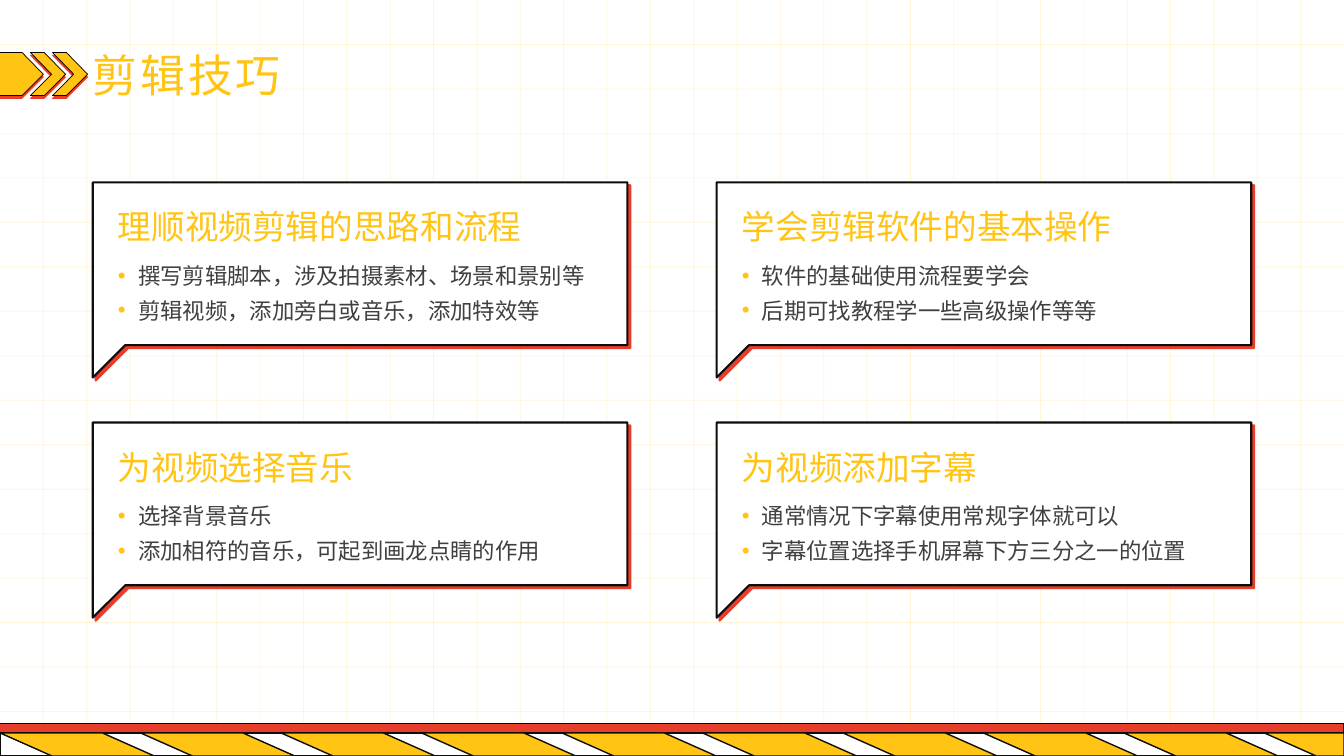
from itertools import product

from lxml.etree import SubElement
from pptx import Presentation
from pptx.dml.color import RGBColor
from pptx.enum.shapes import MSO_CONNECTOR, MSO_SHAPE
from pptx.enum.text import MSO_AUTO_SIZE, PP_ALIGN
from pptx.oxml.ns import qn
from pptx.util import Inches, Pt

COLORS = {
    "yellow": "FFC414",
    "red": "E73E2B",
    "white": "FFFFFF",
    "ink": "0D0D0D",
    "black": "000000",
    "body": "404040",
}
HEADING_FONT = "Noto Sans CJK JP"
BODY_FONT = "Noto Sans CJK SC"
COLUMNS, ROWS = 31, 17

TIPS = [
    ("理顺视频剪辑的思路和流程",
     ["撰写剪辑脚本，涉及拍摄素材、场景和景别等", "剪辑视频，添加旁白或音乐，添加特效等"]),
    ("学会剪辑软件的基本操作",
     ["软件的基础使用流程要学会", "后期可找教程学一些高级操作等等"]),
    ("为视频选择音乐",
     ["选择背景音乐", "添加相符的音乐，可起到画龙点睛的作用"]),
    ("为视频添加字幕",
     ["通常情况下字幕使用常规字体就可以", "字幕位置选择手机屏幕下方三分之一的位置"]),
]


def rgb(name):
    return RGBColor.from_string(COLORS[name])


def add_solid_fill(parent, name):
    fill = SubElement(parent, qn("a:solidFill"))
    return SubElement(fill, qn("a:srgbClr"), val=COLORS[name])


class GridSlide:
    """Draws on one slide; all lengths are grid columns and rows."""

    def __init__(self, deck):
        self.slide = deck.slides.add_slide(deck.slide_layouts[6])
        self.shapes = self.slide.shapes
        self.column = deck.slide_width / COLUMNS
        self.row = deck.slide_height / ROWS
        self.slide.background.fill.solid()
        self.slide.background.fill.fore_color.rgb = rgb("white")

    def point(self, x, y):
        return round(x * self.column), round(y * self.row)

    def paint(self, shape, fill, line, weight):
        shape.shadow.inherit = False
        shape.fill.solid()
        shape.fill.fore_color.rgb = rgb(fill)
        shape.line.color.rgb = rgb(line)
        shape.line.width = Pt(weight)

    def grid_line(self, start, end):
        rule = self.shapes.add_connector(
            MSO_CONNECTOR.STRAIGHT, *self.point(*start), *self.point(*end))
        rule.line.color.rgb = rgb("yellow")
        rule.line.width = Pt(0.5)
        color = rule.line._ln.find(".//" + qn("a:srgbClr"))
        SubElement(color, qn("a:alpha"), val="17000")
        SubElement(rule._element.spPr, qn("a:effectLst"))

    def band(self, y, height, fill, line, weight):
        bar = self.shapes.add_shape(
            MSO_SHAPE.RECTANGLE, *self.point(0, y), *self.point(COLUMNS, height))
        self.paint(bar, fill, line, weight)

    def outline(self, contours, fill, line, weight, shadow=None):
        """Draw closed contours as one shape; shadow is (points, degrees)."""
        contours = [[self.point(*p) for p in contour] for contour in contours]
        builder = self.shapes.build_freeform(*contours[0][0])
        for contour in contours:
            if contour is not contours[0]:
                builder.move_to(*contour[0])
            builder.add_line_segments(contour[1:], close=True)
        figure = builder.convert_to_shape()
        self.paint(figure, fill, line, weight)
        if shadow:
            distance, degrees = shadow
            effects = figure._element.spPr.find(qn("a:effectLst"))
            drop = SubElement(effects, qn("a:outerShdw"), blurRad="0",
                              dist=str(Pt(distance)), dir=str(degrees * 60000),
                              algn="tl", rotWithShape="0")
            SubElement(drop, qn("a:srgbClr"), val=COLORS["red"])

    def text_frame(self, x, y, width, height, wrap):
        frame = self.shapes.add_textbox(
            *self.point(x, y), *self.point(width, height)).text_frame
        frame.margin_left = frame.margin_right = 0
        frame.margin_top = frame.margin_bottom = 0
        frame.word_wrap = wrap
        frame.auto_size = MSO_AUTO_SIZE.SHAPE_TO_FIT_TEXT
        return frame

    def format_run(self, run, size, color, font):
        run.font.size = Pt(size)
        run.font.color.rgb = rgb(color)
        run.font.name = font
        SubElement(run.font._element, qn("a:ea"), typeface=font)

    def heading(self, x, y, width, height, wording, size, line, weight):
        """Place one outlined line of text and return its paragraph."""
        frame = self.text_frame(x, y, width, height, wrap=False)
        frame.text = wording
        run = frame.paragraphs[0].runs[0]
        self.format_run(run, size, "yellow", HEADING_FONT)
        properties = run.font._element
        edge = SubElement(properties, qn("a:ln"), w=str(Pt(weight)))
        add_solid_fill(edge, line)
        properties.insert(0, edge)
        return frame.paragraphs[0]

    def bullets(self, x, y, width, height, points):
        frame = self.text_frame(x, y, width, height, wrap=True)
        frame.text = "\n".join(points)
        for paragraph in frame.paragraphs:
            paragraph.alignment = PP_ALIGN.JUSTIFY
            paragraph.line_spacing = 1.3
            properties = paragraph._p.get_or_add_pPr()
            properties.set("marL", str(Inches(0.2)))
            properties.set("indent", str(Inches(-0.2)))
            bullet_color = SubElement(properties, qn("a:buClr"))
            SubElement(bullet_color, qn("a:srgbClr"), val=COLORS["yellow"])
            SubElement(properties, qn("a:buFont"), typeface="Arial")
            SubElement(properties, qn("a:buChar"), char="•")
            self.format_run(paragraph.runs[0], 16, "body", BODY_FONT)

    def tip_card(self, x, y, title, points):
        right, bottom = x + 12.33, y + 3.66
        bubble = [(x, y), (right, y), (right, bottom), (x + 0.75, bottom),
                  (x, y + 4.39)]
        self.outline([bubble], "white", "ink", 1.5, shadow=(3, 45))
        self.heading(x + 0.58, y + 0.54, 0.78 * len(title), 0.91, title,
                     24, "ink", 0.25)
        self.bullets(x + 0.58, y + 1.61, 11.16, 1.52, points)


def draw_grid(page):
    for y in range(1, ROWS):
        page.grid_line((0, y), (COLUMNS, y))
    for x in range(1, COLUMNS):
        page.grid_line((x, 0), (x, ROWS))


def draw_arrows(page):
    top, middle, bottom = 1.18, 1.67, 2.15
    tag = [(-0.02, top), (0.51, top), (1, middle), (0.51, bottom), (-0.02, bottom)]
    chevrons = [
        [(x + 0.81, middle), (x + 0.32, bottom), (x, bottom),
         (x + 0.49, middle), (x, top), (x + 0.32, top)]
        for x in (0.7, 1.21)
    ]
    for arrow in [tag, *chevrons]:
        page.outline([arrow], "yellow", "black", 0.5, shadow=(2, 90))


def draw_hazard_strip(page):
    top, pitch, width, lean = 16.48, 3.24, 2.36, 1.2
    page.band(top, ROWS - top, "white", "ink", 1)
    stripes = []
    for x in (i * pitch for i in range(10)):
        corners = [(x, top), (x + lean, ROWS), (x + lean + width, ROWS),
                   (x + width, top)]
        stripes.append([(min(cx, COLUMNS), cy) for cx, cy in corners])
    page.outline(stripes, "yellow", "ink", 1)


def main():
    deck = Presentation()
    deck.slide_width, deck.slide_height = Inches(13.33), Inches(7.5)
    page = GridSlide(deck)
    draw_grid(page)
    page.band(16.27, 0.57, "red", "black", 0)
    draw_arrows(page)
    draw_hazard_strip(page)
    title = page.heading(2.14, 1.22, 4.44, 1.13, "剪辑技巧", 32, "black", 0.5)
    title.line_spacing = 0.9
    title.runs[0].font._element.set("spc", "200")
    for (row, column), (name, points) in zip(product(range(2), repeat=2), TIPS):
        page.tip_card(2.14 + 14.39 * column, 4.1 + 5.4 * row, name, points)
    deck.save("out.pptx")


if __name__ == "__main__":
    main()
